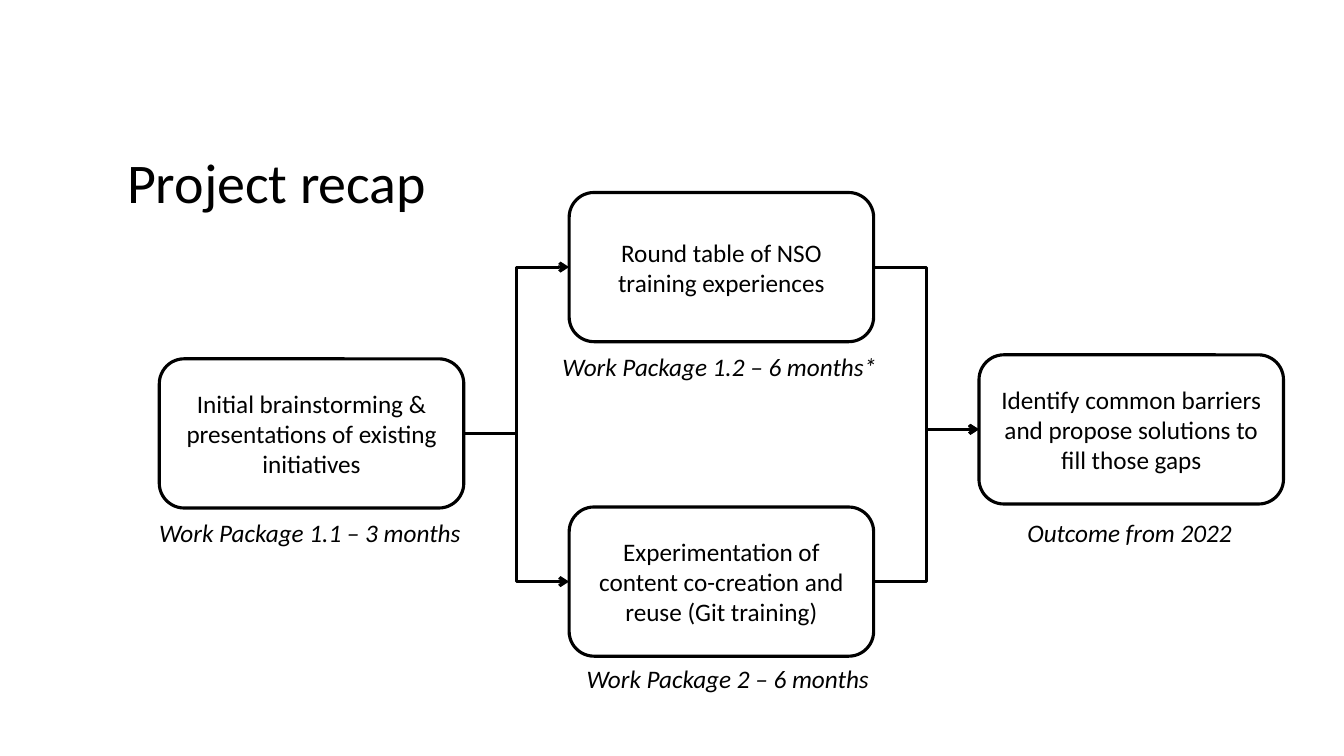
from lxml import etree
from pptx import Presentation
from pptx import util as u
from pptx.dml.color import RGBColor
from pptx.enum import shapes, text
from pptx.oxml.ns import qn

BLACK, WHITE = "000000", "FFFFFF"
LEFT, COLUMN_STEP = 1.58, 4.065
BOX_WIDTH, BOX_HEIGHT = 3.02, 1.48
CAPTION_HEIGHT = 0.4
RIGHT_SIDE, LEFT_SIDE = 3, 1


def color(value):
    return RGBColor.from_string(value)


def write(shape, words, size, align, italic=None):
    """Put one formatted run into the first paragraph of a shape."""
    para = shape.text_frame.paragraphs[0]
    para.alignment = align
    span = para.add_run()
    span.text = words
    span.font.name = "Calibri"
    span.font.size = u.Pt(size)
    span.font.italic = italic
    span.font.color.rgb = color(BLACK)
    return para


deck = Presentation()
deck.slide_width, deck.slide_height = u.Inches(13.33), u.Inches(7.5)
page = deck.slides.add_slide(deck.slide_layouts[5])

title = page.shapes.title
title.left, title.top = u.Inches(1.16), u.Inches(0.57)
title.width, title.height = u.Inches(11.99), u.Inches(1.62)
title.text_frame.vertical_anchor = text.MSO_ANCHOR.BOTTOM
title.text_frame.auto_size = text.MSO_AUTO_SIZE.NONE
write(title, "Project recap", 40, text.PP_ALIGN.LEFT).line_spacing = 0.9

# name: column, top, wording, caption, caption left, caption top, caption width
steps = {
    "start": (0, 3.56, "Initial brainstorming & presentations of existing initiatives",
              "Work Package 1.1 – 3 months", 1.48, 5.08, 3.22),
    "round table": (1, 1.91, "Round table of NSO training experiences",
                    "Work Package 1.2 – 6 months*", 5.48, 3.44, 3.35),
    "experiment": (1, 5.03, "Experimentation of content co-creation and reuse (Git training)",
                   "Work Package 2 – 6 months", 5.72, 6.53, 3.03),
    "outcome": (2, 3.52, "Identify common barriers and propose solutions to fill those gaps",
                "Outcome from 2022", 10.09, 5.08, 2.25),
}

boxes = {}
for name, (column, top, words, caption, caption_left, caption_top, caption_width) in steps.items():
    box = page.shapes.add_shape(
        shapes.MSO_SHAPE.ROUNDED_RECTANGLE,
        u.Inches(LEFT + column * COLUMN_STEP), u.Inches(top),
        u.Inches(BOX_WIDTH), u.Inches(BOX_HEIGHT))
    box.shadow.inherit = False
    box.fill.solid()
    box.fill.fore_color.rgb = color(WHITE)
    box.line.color.rgb = color(BLACK)
    box.line.width = u.Pt(2.25)
    box.text_frame.word_wrap = True
    box.text_frame.vertical_anchor = text.MSO_ANCHOR.MIDDLE
    write(box, words, 18, text.PP_ALIGN.CENTER)
    boxes[name] = box

    label = page.shapes.add_textbox(
        u.Inches(caption_left), u.Inches(caption_top),
        u.Inches(caption_width), u.Inches(CAPTION_HEIGHT))
    label.text_frame.word_wrap = False
    label.text_frame.auto_size = text.MSO_AUTO_SIZE.SHAPE_TO_FIT_TEXT
    write(label, caption, 18, text.PP_ALIGN.LEFT, italic=True)

for source, target in (("start", "round table"), ("start", "experiment"),
                       ("round table", "outcome"), ("experiment", "outcome")):
    arrow = page.shapes.add_connector(shapes.MSO_CONNECTOR.ELBOW, 0, 0, 0, 0)
    arrow.begin_connect(boxes[source], RIGHT_SIDE)
    arrow.end_connect(boxes[target], LEFT_SIDE)
    arrow.line.color.rgb = color(BLACK)
    arrow.line.width = u.Pt(2.25)
    etree.SubElement(arrow.line._get_or_add_ln(), qn("a:tailEnd"), type="arrow")
    etree.SubElement(arrow._element.spPr, qn("a:effectLst"))

deck.save("out.pptx")
